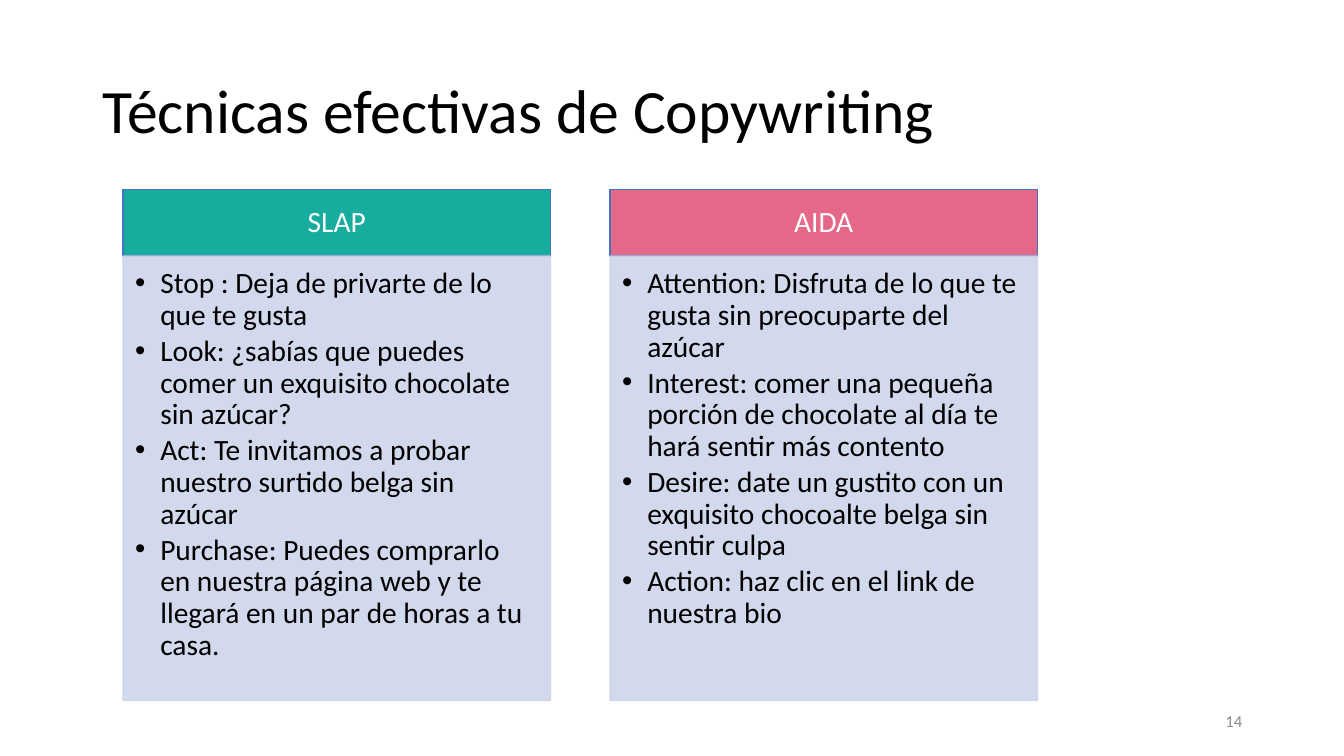
from lxml import etree
from pptx import Presentation
from pptx.dml.color import RGBColor
from pptx.enum.shapes import MSO_SHAPE
from pptx.enum.text import MSO_ANCHOR, PP_ALIGN
from pptx.oxml.ns import qn
from pptx.util import Inches, Pt

RECTANGLE = MSO_SHAPE.RECTANGLE
TOP, MIDDLE = MSO_ANCHOR.TOP, MSO_ANCHOR.MIDDLE
LEFT, CENTER, RIGHT = PP_ALIGN.LEFT, PP_ALIGN.CENTER, PP_ALIGN.RIGHT
COLORS = {
    "black": "000000", "white": "FFFFFF", "gray": "8C8C8C", "teal": "16AD9E",
    "pink": "E46988", "blue": "4472C4", "lavender": "CFD5EA",
}
TECHNIQUES = [
    ("SLAP", "teal", [
        "Stop : Deja de privarte de lo que te gusta",
        "Look: ¿sabías que puedes comer un exquisito chocolate sin azúcar?",
        "Act: Te invitamos a probar nuestro surtido belga sin azúcar",
        "Purchase: Puedes comprarlo en nuestra página web y te llegará en un par de horas a tu casa.",
    ]),
    ("AIDA", "pink", [
        "Attention: Disfruta de lo que te gusta sin preocuparte del azúcar",
        "Interest: comer una pequeña porción de chocolate al día te hará sentir más contento",
        "Desire: date un gustito con un exquisito chocoalte belga sin sentir culpa",
        "Action: haz clic en el link de nuestra bio",
    ]),
]
COLUMN_LEFT, COLUMN_WIDTH, COLUMN_STEP = 1.22, 4.24, 4.83
HEADER_TOP, HEADER_HEIGHT, BODY_HEIGHT = 1.88, 0.66, 4.41


def write(shape, lines, size, color, align=LEFT, anchor=MIDDLE,
          insets=(0.1, 0.05, 0.1, 0.05), spacing=0.9, after=0, bullets=False):
    frame = shape.text_frame
    frame.word_wrap = True
    frame.vertical_anchor = anchor
    for side, inset in zip(("left", "top", "right", "bottom"), insets):
        setattr(frame, f"margin_{side}", Inches(inset))
    frame.text = "\n".join(lines)
    for paragraph in frame.paragraphs:
        if bullets:
            properties = paragraph._p.get_or_add_pPr()
            properties.set("marL", str(Inches(0.25)))
            properties.set("indent", str(-Inches(0.25)))
            etree.SubElement(properties, qn("a:buFont")).set("typeface", "Arial")
            etree.SubElement(properties, qn("a:buChar")).set("char", "•")
        layout = {"alignment": align, "line_spacing": spacing, "space_after": Pt(after)}
        for name, value in layout.items():
            setattr(paragraph, name, value)
        font = paragraph.runs[0].font
        font.name, font.size = "Calibri", Pt(size)
        font.color.rgb = RGBColor.from_string(COLORS[color])


def add_panel(left, top, height, fill, line, opacity=100):
    panel = slide.shapes.add_shape(
        RECTANGLE, Inches(left), Inches(top), Inches(COLUMN_WIDTH), Inches(height))
    panel.shadow.inherit = False
    panel.fill.solid()
    panel.line.width = Pt(1)
    for paint, color in ((panel.fill.fore_color, fill), (panel.line.color, line)):
        paint.rgb = RGBColor.from_string(COLORS[color])
    if opacity < 100:
        for tint in panel._element.spPr.iter(qn("a:srgbClr")):
            etree.SubElement(tint, qn("a:alpha")).set("val", str(opacity * 1000))
    return panel


deck = Presentation()
deck.slide_width, deck.slide_height = Inches(13.33), Inches(7.5)
slide = deck.slides.add_slide(deck.slide_layouts[6])

title = slide.shapes.add_textbox(Inches(0.92), Inches(0.4), Inches(11.5), Inches(1.45))
write(title, ["Técnicas efectivas de Copywriting"], 44, "black")

for column, (technique, accent, steps) in enumerate(TECHNIQUES):
    left = COLUMN_LEFT + column * COLUMN_STEP
    header = add_panel(left, HEADER_TOP, HEADER_HEIGHT, accent, "blue")
    write(header, [technique], 21, "white", CENTER, insets=(0.16, 0.09, 0.16, 0.09))
    body = add_panel(left, HEADER_TOP + HEADER_HEIGHT, BODY_HEIGHT,
                     "lavender", "lavender", opacity=90)
    write(body, steps, 21, "black", anchor=TOP, insets=(0.12, 0.12, 0.16, 0.18),
          after=3, bullets=True)

page_number = slide.shapes.add_textbox(Inches(9.42), Inches(6.95), Inches(3), Inches(0.4))
write(page_number, ["14"], 12, "gray", RIGHT, spacing=1.0)

deck.save("out.pptx")
